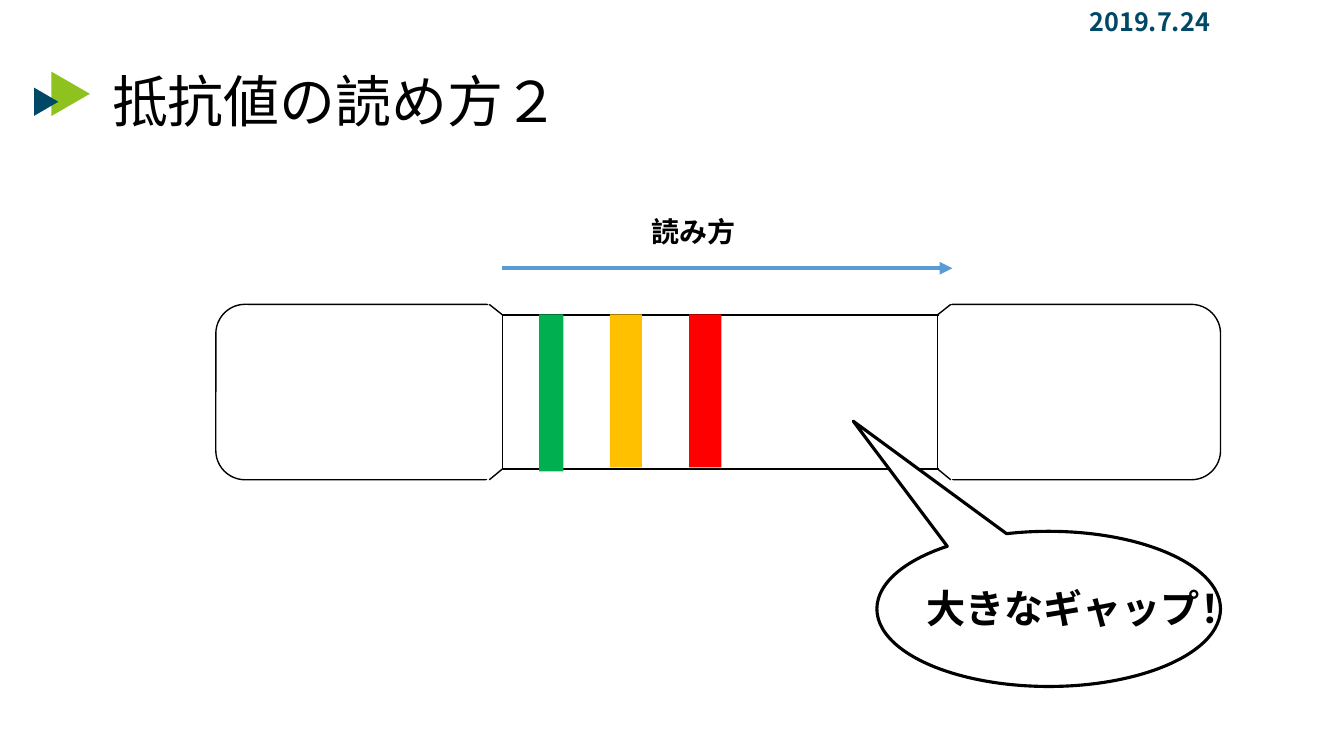
from lxml import etree
from pptx import Presentation
from pptx.dml.color import RGBColor
from pptx.enum.shapes import MSO_CONNECTOR, MSO_SHAPE as SHAPE
from pptx.enum.text import MSO_ANCHOR as ANCHOR, MSO_AUTO_SIZE, PP_ALIGN as ALIGN
from pptx.oxml.ns import qn
from pptx.util import Cm, Pt

BLACK, WHITE, NAVY, LIME, BLUE = "000000", "FFFFFF", "004966", "8EC31F", "5B9BD5"

# Resistor geometry in cm
BODY_TOP, BODY_BOTTOM = 7.67, 12.09
NECK_LEFT, NECK_RIGHT, NECK_TOP, NECK_BOTTOM = 12.67, 23.62, 7.94, 11.81
SHOULDER = 0.34
BANDS = [(13.59, 0.61, 3.96, "00B050"), (15.37, 0.81, 3.86, "FFC000"),
         (17.37, 0.81, 3.86, "FF0000")]


def color(hex_string):
    return RGBColor.from_string(hex_string)


def add_shape(s, kind, x, y, w, h, fill, line_width=None, rotation=0, adjustments=()):
    sp = s.shapes.add_shape(kind, Cm(x), Cm(y), Cm(w), Cm(h))
    sp.shadow.inherit = False
    sp.rotation = rotation
    for i, value in enumerate(adjustments):
        sp.adjustments[i] = value
    sp.fill.solid()
    sp.fill.fore_color.rgb = color(fill)
    if line_width:
        sp.line.color.rgb = color(BLACK)
        sp.line.width = Pt(line_width)
    else:
        sp.line.fill.background()
    return sp


def add_line(s, x1, y1, x2, y2, width=1, line_color=BLACK, arrow=False):
    c = s.shapes.add_connector(MSO_CONNECTOR.STRAIGHT, Cm(x1), Cm(y1), Cm(x2), Cm(y2))
    c.line.color.rgb = color(line_color)
    c.line.width = Pt(width)
    if arrow:
        etree.SubElement(c.line._get_or_add_ln(), qn("a:tailEnd"), type="triangle")
    etree.SubElement(c._element.spPr, qn("a:effectLst"))


def format_text(sp, text, size, font, text_color=BLACK, bold=False,
                align=ALIGN.LEFT, anchor=ANCHOR.TOP, spacing=0.9):
    tf = sp.text_frame
    tf.text = text
    tf.word_wrap = True
    tf.auto_size = MSO_AUTO_SIZE.NONE
    tf.vertical_anchor = anchor
    p = tf.paragraphs[0]
    p.alignment = align
    p.line_spacing = spacing
    r = p.runs[0]
    r.font.size = Pt(size)
    r.font.name = font
    r.font.bold = bold
    r.font.color.rgb = color(text_color)


def add_text(s, x, y, w, h, *args, **kwargs):
    sp = s.shapes.add_textbox(Cm(x), Cm(y), Cm(w), Cm(h))
    format_text(sp, *args, **kwargs)


def add_header(s):
    add_shape(s, SHAPE.ISOSCELES_TRIANGLE, 1.22, 1.88, 1.12, 0.97, LIME, rotation=90)
    add_shape(s, SHAPE.ISOSCELES_TRIANGLE, 0.81, 2.26, 0.71, 0.61, NAVY, rotation=90)
    title = s.shapes.title
    title.left, title.top, title.width, title.height = Cm(2.57), Cm(1.17), Cm(22.25), Cm(2.36)
    format_text(title, "抵抗値の読め方２", 40, "Calibri", anchor=ANCHOR.BOTTOM)
    add_text(s, 24.1, 0.13, 9.75, 1.04, "2019.7.24", 18, "Noto Sans CJK SC", NAVY,
             bold=True, align=ALIGN.CENTER)


def add_resistor(s):
    # Body, with its middle cut back to a narrower neck
    add_shape(s, SHAPE.ROUNDED_RECTANGLE, 5.44, BODY_TOP, 25.32, BODY_BOTTOM - BODY_TOP,
              WHITE, line_width=1)
    for y, rotation in ((7.26, 180), (11.81, 0)):
        add_shape(s, SHAPE.SNIP_2_SAME_RECTANGLE, 12.24, y, 11.79, 0.66, WHITE,
                  rotation=rotation, adjustments=(0.473, 0))

    # Neck edges and sloping shoulders
    for neck_y, body_y in ((NECK_TOP, BODY_TOP), (NECK_BOTTOM, BODY_BOTTOM)):
        add_line(s, NECK_LEFT, neck_y, NECK_RIGHT + 0.05, neck_y, width=1.5)
        add_line(s, NECK_LEFT, neck_y, NECK_LEFT - SHOULDER, body_y)
        add_line(s, NECK_RIGHT, neck_y, NECK_RIGHT + SHOULDER, body_y)

    # Colour bands
    for x, w, h, fill in BANDS:
        add_shape(s, SHAPE.RECTANGLE, x, 7.92, w, h, fill)

    # Neck ends
    for x in (NECK_LEFT, NECK_RIGHT):
        add_line(s, x, NECK_TOP, x, NECK_BOTTOM, width=0.5)


def add_notes_on_reading(s):
    # Reading direction
    add_line(s, 12.65, 6.76, 24, 6.76, width=3, line_color=BLUE, arrow=True)
    add_text(s, 16.18, 4.04, 17.6, 2.36, "読み方", 20, "Cabin", bold=True,
             anchor=ANCHOR.BOTTOM)

    # Callout to the gap
    add_shape(s, SHAPE.OVAL_CALLOUT, 22.1, 13.39, 8.66, 3.91, WHITE, line_width=2.25,
              adjustments=(-0.569, -1.21))
    add_text(s, 23.09, 14.6, 7.67, 1.45, "大きなギャップ！", 28, "Calibri", bold=True,
             spacing=1.0)


def main():
    prs = Presentation()
    prs.slide_width, prs.slide_height = Cm(33.87), Cm(19.05)
    s = prs.slides.add_slide(prs.slide_layouts[5])
    add_header(s)
    add_resistor(s)
    add_notes_on_reading(s)
    prs.save("out.pptx")


if __name__ == "__main__":
    main()
